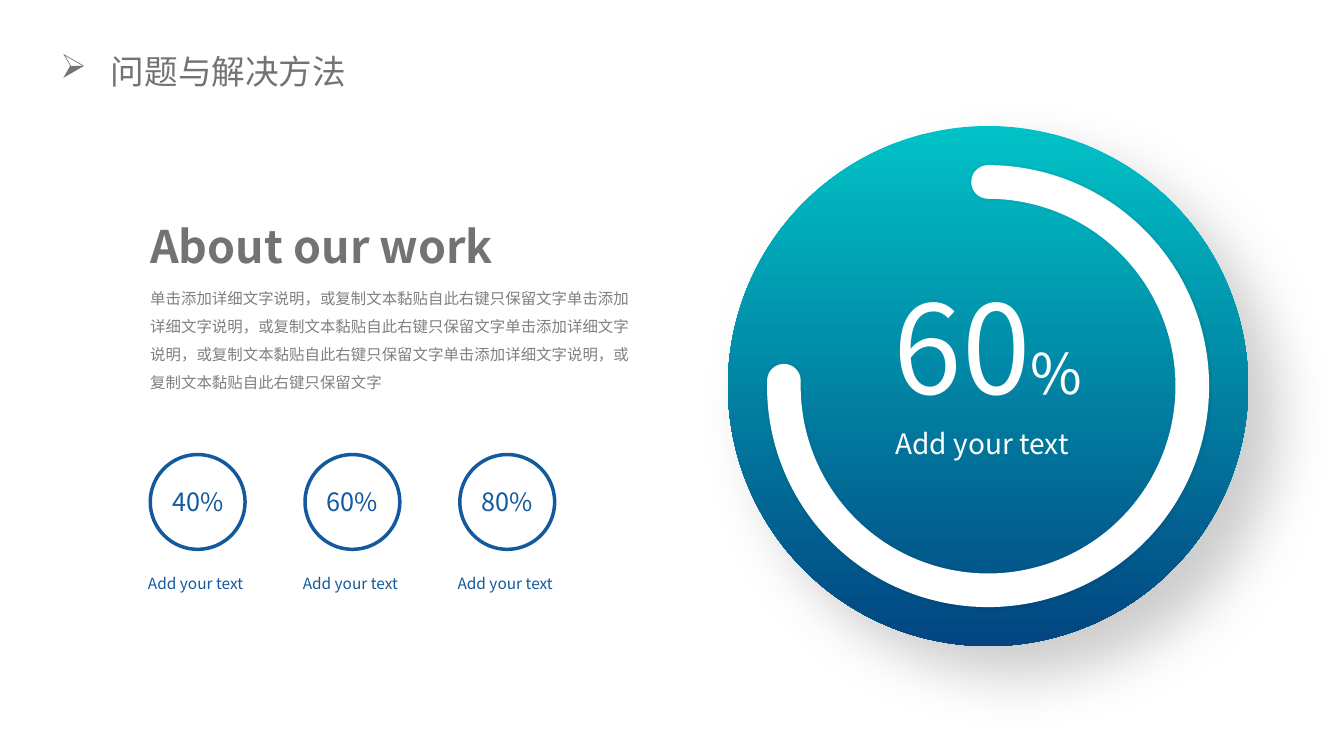
from dataclasses import dataclass

from lxml.etree import SubElement
from pptx import Presentation
from pptx.dml.color import RGBColor
from pptx.enum.shapes import MSO_SHAPE as Preset
from pptx.enum.text import MSO_ANCHOR as Anchor, MSO_AUTO_SIZE as AutoSize, PP_ALIGN as Align
from pptx.oxml.ns import qn
from pptx.util import Inches, Pt


@dataclass(frozen=True)
class Theme:
    font: str = "Noto Sans CJK SC"
    heading: str = "757272"
    body: str = "808080"
    accent: str = "12599D"
    light: str = "FFFFFF"
    dial_top: str = "01C2C6"
    dial_bottom: str = "024581"
    dial_shadow: str = "808080"
    arc_shadow: str = "000000"
    title_size: int = 24
    heading_size: int = 32
    small_size: int = 11
    gauge_size: int = 18
    dial_size: int = 88
    percent_size: int = 40
    caption_size: int = 20


@dataclass(frozen=True)
class Box:
    left: float
    top: float
    width: float
    height: float

    def share(self, left, top, width, height):
        return Box(self.left + self.width * left / 100, self.top + self.height * top / 100,
                   self.width * width / 100, self.height * height / 100)

    def columns(self, count):
        return [self.share(100 * index / count, 0, 100 / count, 100) for index in range(count)]

    def lengths(self):
        return [Inches(value) for value in (self.left, self.top, self.width, self.height)]


THEME = Theme()
SLIDE = Box(0, 0, 13.33, 7.5)


def colour(code):
    return RGBColor.from_string(code)


def place(shape, box):
    shape.left, shape.top, shape.width, shape.height = box.lengths()
    return shape


def write(shape, *runs, color, align=Align.LEFT, spacing=None, bold=False,
          anchor=Anchor.TOP, inset=None, bullet=None, hanging=0):
    frame = shape.text_frame
    frame.word_wrap = True
    frame.auto_size = AutoSize.NONE
    frame.vertical_anchor = anchor
    if inset is not None:
        frame.margin_left = frame.margin_top = frame.margin_right = frame.margin_bottom = inset
    paragraph = frame.paragraphs[0]
    paragraph.alignment = align
    paragraph.space_before = Pt(0)
    if spacing:
        paragraph.line_spacing = spacing
    properties = paragraph._p.get_or_add_pPr()
    properties.set("marL", str(Inches(hanging)))
    properties.set("indent", str(-Inches(hanging)))
    if bullet:
        SubElement(properties, qn("a:buChar"), char=bullet)
    else:
        SubElement(properties, qn("a:buNone"))
    for text, size in runs:
        run = paragraph.add_run()
        run.text = text
        run.font.size = Pt(size)
        run.font.bold = bold
        run.font.color.rgb = colour(color)
        run.font.name = THEME.font
        SubElement(run._r.get_or_add_rPr(), qn("a:ea"), typeface=THEME.font)


def add_text(shapes, box, *runs, **formats):
    write(shapes.add_textbox(*box.lengths()), *runs, **formats)


def add_outline(shapes, preset, box, color, width):
    shape = shapes.add_shape(preset, *box.lengths())
    shape.shadow.inherit = False
    shape.fill.background()
    shape.line.color.rgb = colour(color)
    shape.line.width = Pt(width)
    return shape


def cast_shadow(shape, color, alpha, blur, distance, angle):
    shape.shadow.inherit = False
    effects = shape._element.spPr.find(qn("a:effectLst"))
    shadow = SubElement(effects, qn("a:outerShdw"), blurRad=str(Pt(blur)), dist=str(Pt(distance)),
                        dir=str(angle * 60000), algn="ctr", rotWithShape="0")
    tint = SubElement(shadow, qn("a:srgbClr"), val=color)
    SubElement(tint, qn("a:alpha"), val=str(alpha * 1000))


def build_title(slide, box):
    write(place(slide.shapes.title, box), ("问题与解决方法", THEME.title_size), color=THEME.heading,
          anchor=Anchor.MIDDLE, inset=0, bullet="➢", hanging=0.5)


def build_dial(slide, box):
    disc = slide.shapes.add_shape(Preset.OVAL, *box.lengths())
    disc.line.fill.background()
    disc.fill.gradient()
    disc.fill.gradient_angle = 270
    for stop, color in zip(disc.fill.gradient_stops, (THEME.dial_top, THEME.dial_bottom)):
        stop.color.rgb = colour(color)
    cast_shadow(disc, THEME.dial_shadow, alpha=40, blur=40, distance=30, angle=45)

    arc = add_outline(slide.shapes, Preset.ARC, box.share(10.75, 10.75, 78.5, 78.5), THEME.light, 24)
    arc.adjustments[0] = 162
    arc.adjustments[1] = 108.91
    arc._element.spPr.find(qn("a:ln")).set("cap", "rnd")
    cast_shadow(arc, THEME.arc_shadow, alpha=10, blur=3, distance=0, angle=0)

    add_text(slide.shapes, box.share(24, 26.94, 52, 30.6), ("60", THEME.dial_size),
             ("%", THEME.percent_size), color=THEME.light, align=Align.CENTER)
    add_text(slide.shapes, box.share(16, 56.8, 65.7, 8.5), ("Add your text", THEME.caption_size),
             color=THEME.light, align=Align.CENTER)


def build_about(slide, box):
    add_text(slide.shapes, box.share(0, 0, 81, 32), ("About our work", THEME.heading_size),
             color=THEME.heading, bold=True, spacing=1.2, inset=0)
    sentence = "单击添加详细文字说明，或复制文本黏贴自此右键只保留文字"
    body = place(slide.placeholders[1], box.share(0, 39.3, 100, 60.7))
    write(body, (sentence * 4, THEME.small_size), color=THEME.body, spacing=1.5, inset=0)


def build_gauge(slide, box, value):
    shapes = slide.shapes.add_group_shape().shapes
    add_outline(shapes, Preset.OVAL, box.share(19.38, 0, 61.24, 65.73), THEME.accent, 2.5)
    add_text(shapes, box.share(0, 18.9, 100, 28), (value, THEME.gauge_size),
             color=THEME.accent, align=Align.CENTER)
    add_text(shapes, box.share(-1.3, 79.7, 100, 20.3), ("Add your text", THEME.small_size),
             color=THEME.accent, align=Align.CENTER)


def build_gauges(slide, box, values):
    for cell, value in zip(box.columns(len(values)), values):
        build_gauge(slide, cell, value)


def main():
    presentation = Presentation()
    presentation.slide_width = Inches(SLIDE.width)
    presentation.slide_height = Inches(SLIDE.height)
    slide = presentation.slides.add_slide(presentation.slide_layouts[1])
    build_title(slide, SLIDE.share(4.5, 6.67, 22, 5.33))
    build_dial(slide, SLIDE.share(54.16, 16.67, 38.71, 68.8))
    build_about(slide, SLIDE.share(11.18, 27.47, 36.31, 24.4))
    build_gauges(slide, SLIDE.share(8.95, 60.13, 34.55, 19.07), ("40%", "60%", "80%"))
    presentation.save("out.pptx")


if __name__ == "__main__":
    main()
